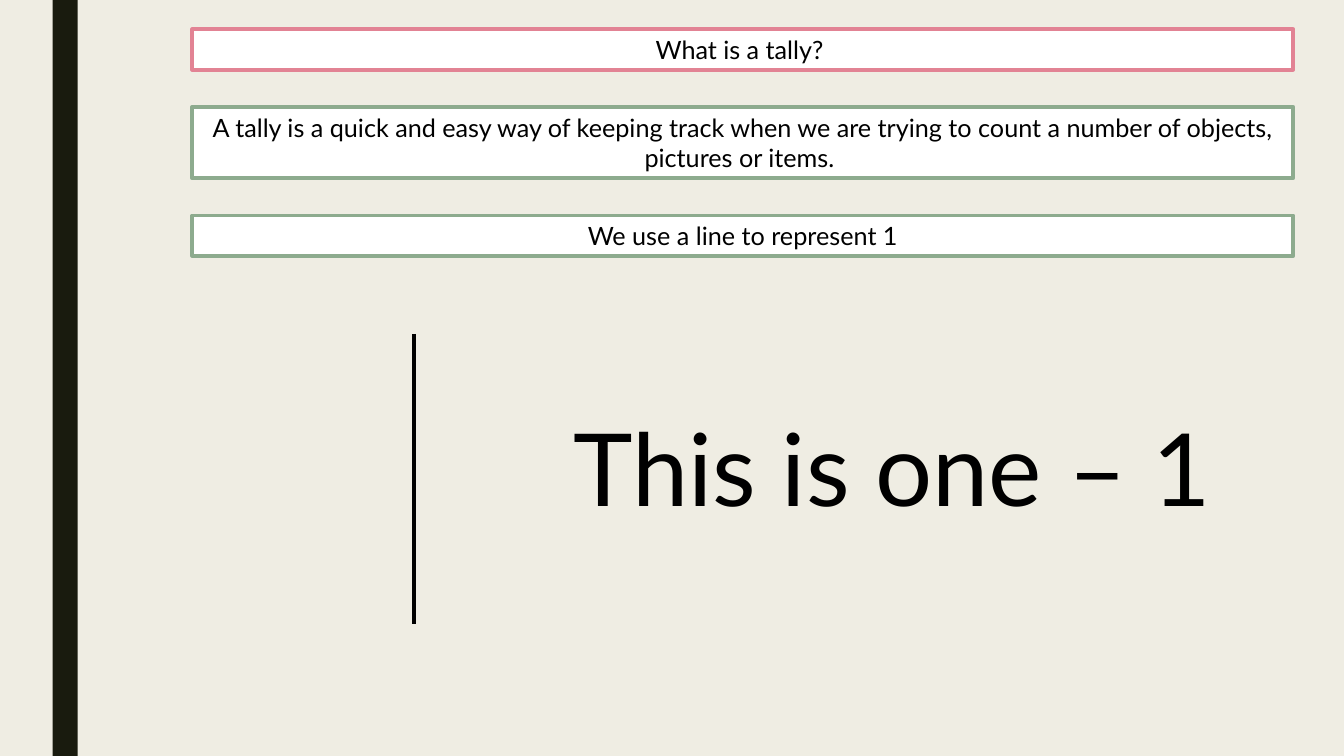
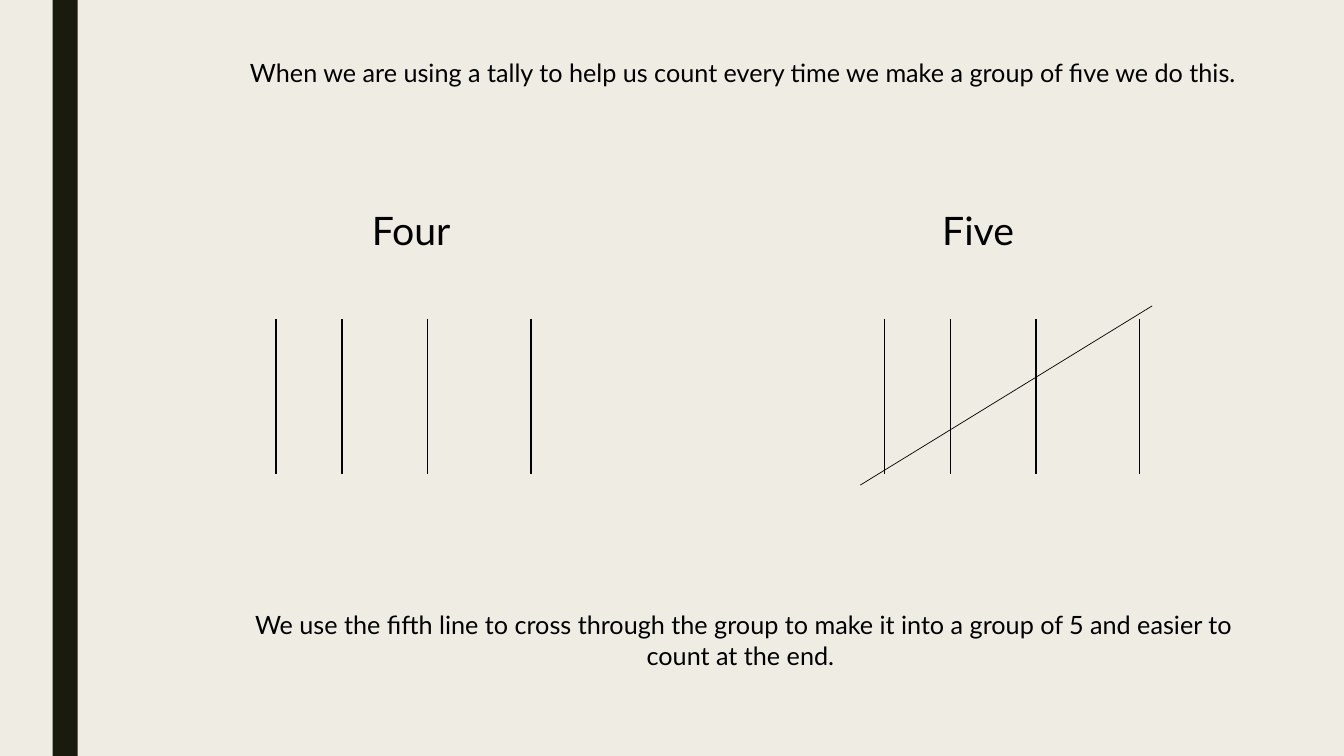
from lxml import etree
from pptx import Presentation
from pptx import util as u
from pptx.dml.color import RGBColor
from pptx.enum import shapes, text
from pptx.oxml.ns import qn

Pt = u.Pt
CENTER, LEFT = text.PP_ALIGN.CENTER, text.PP_ALIGN.LEFT
PAPER, BAND, WHITE, INK = "EFEDE3", "191B0E", "FFFFFF", "000000"
PINK, GREEN = "E28394", "8DAB8E"
rgb = RGBColor.from_string


def write(box, words, size=18, align=CENTER, wrap=True):
    frame = box.text_frame
    frame.word_wrap = wrap
    paragraph = frame.paragraphs[0]
    paragraph.alignment = align
    run = paragraph.add_run()
    run.text = words
    for attribute, value in {"name": "Lato", "size": Pt(size)}.items():
        setattr(run.font, attribute, value)
    run.font.color.rgb = rgb(INK)


def stroke(parent, x1, y1, x2, y2, weight):
    line = parent.shapes.add_connector(
        shapes.MSO_CONNECTOR.STRAIGHT, Pt(x1), Pt(y1), Pt(x2), Pt(y2))
    line.line.color.rgb = rgb(INK)
    line.line.width = Pt(weight)
    etree.SubElement(line._element.spPr, qn("a:effectLst"))


# Shared page: size, background and side band
prs = Presentation()
prs.slide_width, prs.slide_height = Pt(960), Pt(540)
background = prs.slide_master.background.fill
background.solid()
background.fore_color.rgb = rgb(PAPER)

intro, groups = [prs.slides.add_slide(prs.slide_layouts[6]) for _ in range(2)]
for slide in (intro, groups):
    band = slide.shapes.add_shape(
        shapes.MSO_SHAPE.RECTANGLE, Pt(37.5), 0, Pt(18), prs.slide_height)
    band.shadow.inherit = False
    band.fill.solid()
    band.fill.fore_color.rgb = rgb(BAND)
    band.line.fill.background()

# Slide 1: framed statements, stacked with equal gaps
statements = [
    ("What is a tally? ", PINK, 28.8),
    ("A tally is a quick and easy way of keeping track when we are trying "
     "to count a number of objects, pictures or items. ", GREEN, 51),
    ("We use a line to represent 1", GREEN, 28.8),
]
top, gap = 21, 26.6
for words, frame_color, height in statements:
    statement = intro.shapes.add_shape(
        shapes.MSO_SHAPE.RECTANGLE, Pt(137.3), Pt(top), Pt(786.5), Pt(height))
    statement.shadow.inherit = False
    statement.fill.solid()
    statement.fill.fore_color.rgb = rgb(WHITE)
    statement.line.color.rgb = rgb(frame_color)
    statement.line.width = Pt(2.75)
    write(statement, words)
    top += height + gap

# Slide 1: a single tally line and its meaning
stroke(intro, 295.5, 238.5, 295.5, 445.5, 3)
meaning = intro.shapes.add_textbox(Pt(402.5), Pt(286.5), Pt(481), Pt(94))
write(meaning, "This is one – 1", 72, LEFT, wrap=False)

# Slide 2: captions and group headings
captions = [
    ("When we are using a tally to help us count every time we make a group "
     "of five we do this.", 171.5, 37.5, 719.5, 28.8, 18, LEFT),
    ("Four", 258.5, 144, 94.5, 41, 28, LEFT),
    ("Five ", 655, 144, 94.5, 41, 28, CENTER),
    ("We use the fifth line to cross through the group to make it into a "
     "group of 5 and easier to count at the end. ",
     171.5, 432, 719.5, 51, 18, CENTER),
]
for words, left, top, width, height, size, align in captions:
    caption = groups.shapes.add_textbox(Pt(left), Pt(top), Pt(width), Pt(height))
    write(caption, words, size, align)

# Slide 2: tally of four, and tally of five with its crossing line
for start, crossed in ((197.2, False), (632, True)):
    tally = groups.shapes.add_group_shape()
    for offset in (0, 47, 108, 182):
        stroke(tally, start + offset, 228, start + offset, 338.5, 1)
    if crossed:
        stroke(tally, start - 17.5, 346.5, start + 191, 218.5, 0.5)

prs.save("out.pptx")
